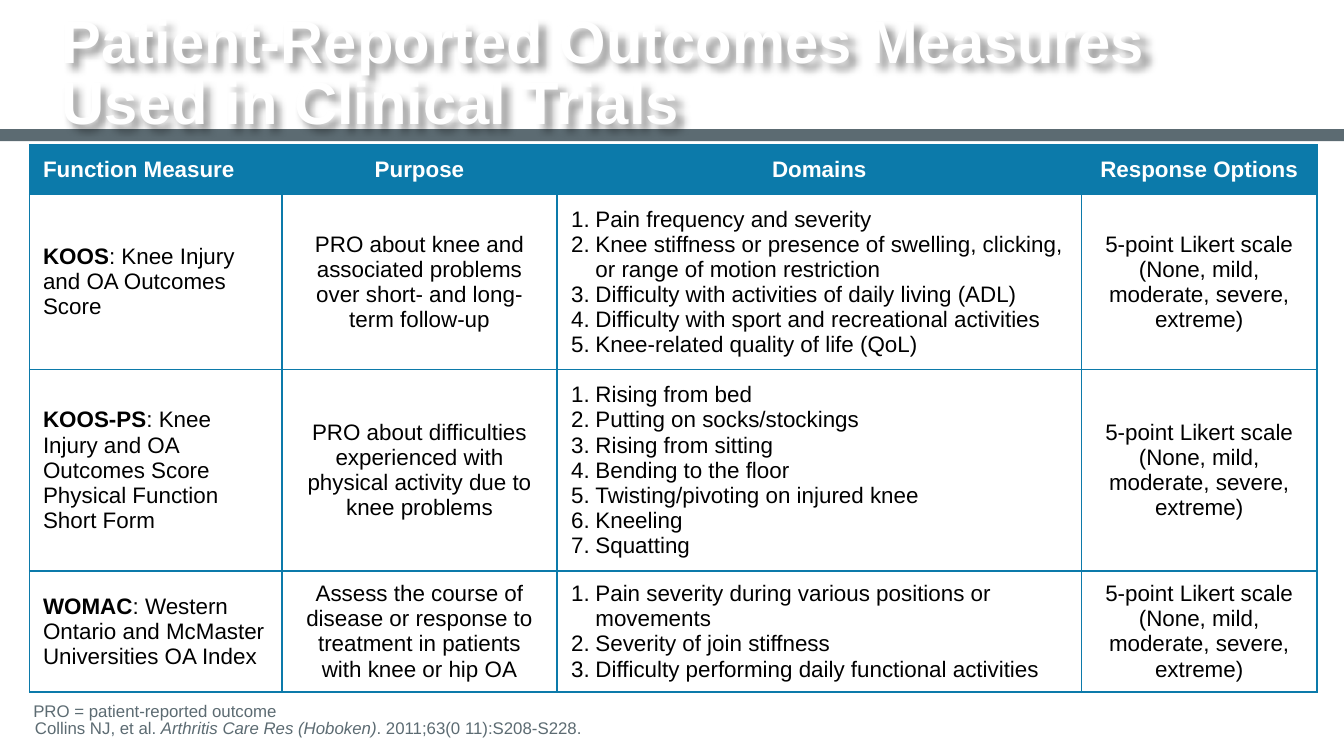
"""Build a slide with a table of patient-reported outcome measures."""
from dataclasses import dataclass

from lxml import etree
from pptx import Presentation, util as u
from pptx.dml.color import RGBColor
from pptx.enum import shapes, text
from pptx.oxml import ns

WHITE = RGBColor(0xFF, 0xFF, 0xFF)
BLACK = RGBColor(0, 0, 0)
BLUE = RGBColor(0x0C, 0x7A, 0xAA)
SLATE = RGBColor(0x5C, 0x6B, 0x72)
FONT = "Arial"
MID = text.PP_ALIGN.CENTER
HEADS = ("Function Measure", "Purpose", "Domains", "Response Options")
WIDTHS = (4.77, 5.2, 9.91, 4.45)
HIGH = (0.94, 1.04, 1.04, 1.04)
SCALE = ("5-point Likert scale", "(None, mild, moderate, severe, extreme)")


@dataclass
class Measure:
    """One outcome measure, a row of the table."""
    name: str
    title: str
    purpose: str
    domains: tuple[str, ...]


MEASURES = (
    Measure(
        "KOOS", "Knee Injury and OA Outcomes Score",
        "PRO about knee and associated problems over short- and long-term follow-up",
        ("Pain frequency and severity",
         "Knee stiffness or presence of swelling, clicking, or range of motion restriction",
         "Difficulty with activities of daily living (ADL)",
         "Difficulty with sport and recreational activities",
         "Knee-related quality of life (QoL)")),
    Measure(
        "KOOS-PS", "Knee Injury and OA Outcomes Score Physical Function Short Form",
        "PRO about difficulties experienced with physical activity due to knee problems",
        ("Rising from bed", "Putting on socks/stockings", "Rising from sitting",
         "Bending to the floor", "Twisting/pivoting on injured knee", "Kneeling",
         "Squatting")),
    Measure(
        "WOMAC", "Western Ontario and McMaster Universities OA Index",
        "Assess the course of disease or response to treatment in patients with knee or hip OA",
        ("Pain severity during various positions or movements",
         "Severity of join stiffness",
         "Difficulty performing daily functional activities")),
)


def write(para, words: str, size: float = 12, color: RGBColor = BLACK,
          bold: bool = False, italic: bool = False) -> None:
    """Add a formatted run to a paragraph."""
    run = para.add_run()
    run.text = words
    font = run.font
    font.name, font.size, font.bold, font.italic = FONT, u.Pt(size), bold, italic
    font.color.rgb = color


def child(parent, tag: str, **attrs: str):
    """Append a drawing element with attributes."""
    return etree.SubElement(parent, ns.qn(tag), attrs)


def indent(para, left: float, first: float) -> None:
    """Set the left and first-line indents of a paragraph."""
    props = para._p.get_or_add_pPr()
    props.set("marL", str(u.Cm(left)))
    props.set("indent", str(u.Cm(first)))


def fill(cell, lines: tuple[str, ...], align=None, count: bool = False, **form) -> None:
    """Write lines into a cell, numbered on request."""
    frame = cell.text_frame
    for index, line in enumerate(lines):
        para = frame.add_paragraph() if index else frame.paragraphs[0]
        if align is not None:
            para.alignment = align
        if count:
            indent(para, 0.47, -0.46)
            props = para._p.get_or_add_pPr()
            child(props, "a:buFont", typeface="+mj-lt")
            child(props, "a:buAutoNum", type="arabicPeriod")
        write(para, line, **form)


def border(cell) -> None:
    """Draw a thin blue line on each side of a cell."""
    props = cell._tc.get_or_add_tcPr()
    for index, side in enumerate("LRTB"):
        line = etree.Element(ns.qn(f"a:ln{side}"), w=str(u.Pt(1)))
        child(child(line, "a:solidFill"), "a:srgbClr", val=str(BLUE))
        props.insert(index, line)


def label(slide, left: float, top: float, width: float, height: float,
          anchor, insets: tuple[float, ...]):
    """Add a wrapping text box and return it."""
    box = slide.shapes.add_textbox(*map(u.Cm, (left, top, width, height)))
    body = box.text_frame
    body.word_wrap = True
    body.vertical_anchor = anchor
    (body.margin_left, body.margin_top,
     body.margin_right, body.margin_bottom) = map(u.Cm, insets)
    body.paragraphs[0].line_spacing = 0.85
    return box


def title(slide) -> None:
    """Add the slide title with its soft shadow."""
    box = label(slide, 1.17, 0.13, 23.09, 2.59, text.MSO_ANCHOR.MIDDLE,
                (0, 0.13, 0, 0.13))
    write(box.text_frame.paragraphs[0],
          "Patient-Reported Outcomes Measures Used in Clinical Trials",
          size=32, color=WHITE, bold=True)
    effects = child(box._element.spPr, "a:effectLst")
    shade = child(effects, "a:outerShdw", blurRad=str(u.Pt(4)), dist=str(u.Pt(4)),
                  dir="2700000", algn="tl", rotWithShape="0")
    child(child(shade, "a:srgbClr", val="000000"), "a:alpha", val="40000")


def grid(slide) -> None:
    """Add the table of measures."""
    holder = slide.shapes.add_table(
        len(HIGH), len(WIDTHS), u.Cm(0.56), u.Cm(2.74),
        u.Cm(sum(WIDTHS)), u.Cm(sum(HIGH)))
    table = holder.table
    table.first_row = table.horz_banding = False
    for col, width in zip(table.columns, WIDTHS):
        col.width = u.Cm(width)
    for row, height in zip(table.rows, HIGH):
        row.height = u.Cm(height)
    holder.height = u.Cm(10.34)
    for col, head in enumerate(HEADS):
        fill(table.cell(0, col), (head,), MID if col else None,
             color=WHITE, bold=True)
    for row, item in enumerate(MEASURES, 1):
        name, purpose, domains, scale = table.rows[row].cells
        fill(name, (item.name,), bold=True)
        write(name.text_frame.paragraphs[0], f": {item.title}")
        fill(purpose, (item.purpose,), MID)
        fill(domains, item.domains, count=True)
        fill(scale, SCALE, MID)
    for index, cell in enumerate(table.iter_cells()):
        cell.vertical_anchor = text.MSO_ANCHOR.MIDDLE
        if index < len(HEADS):
            cell.fill.solid()
            cell.fill.fore_color.rgb = BLUE
        else:
            cell.fill.background()
        border(cell)


def foot(slide) -> None:
    """Add the abbreviation and the citation at the foot."""
    box = label(slide, 0, 13.3, 25.4, 0.98, text.MSO_ANCHOR.BOTTOM,
                (0.63, 0, 0, 0.33))
    para = box.text_frame.paragraphs[0]
    indent(para, 0.03, -0.03)
    form = {"size": 9, "color": SLATE}
    write(para, "PRO = patient-reported outcome", **form)
    para.add_line_break()
    write(para, "Collins NJ, et al. ", **form)
    write(para, "Arthritis Care Res (Hoboken)", italic=True, **form)
    write(para, ". 2011;63(0 11):S208-S228.", **form)


def main() -> None:
    """Build and save the slide."""
    deck = Presentation()
    deck.slide_width, deck.slide_height = u.Cm(25.4), u.Cm(14.29)
    slide = deck.slides.add_slide(deck.slide_layouts[6])
    band = slide.shapes.add_shape(shapes.MSO_SHAPE.RECTANGLE, 0, u.Cm(2.44),
                                  u.Cm(25.4), u.Cm(0.23))
    band.shadow.inherit = False
    band.fill.solid()
    band.fill.fore_color.rgb = SLATE
    band.line.fill.background()
    title(slide)
    grid(slide)
    foot(slide)
    deck.save("out.pptx")


if __name__ == "__main__":
    main()
